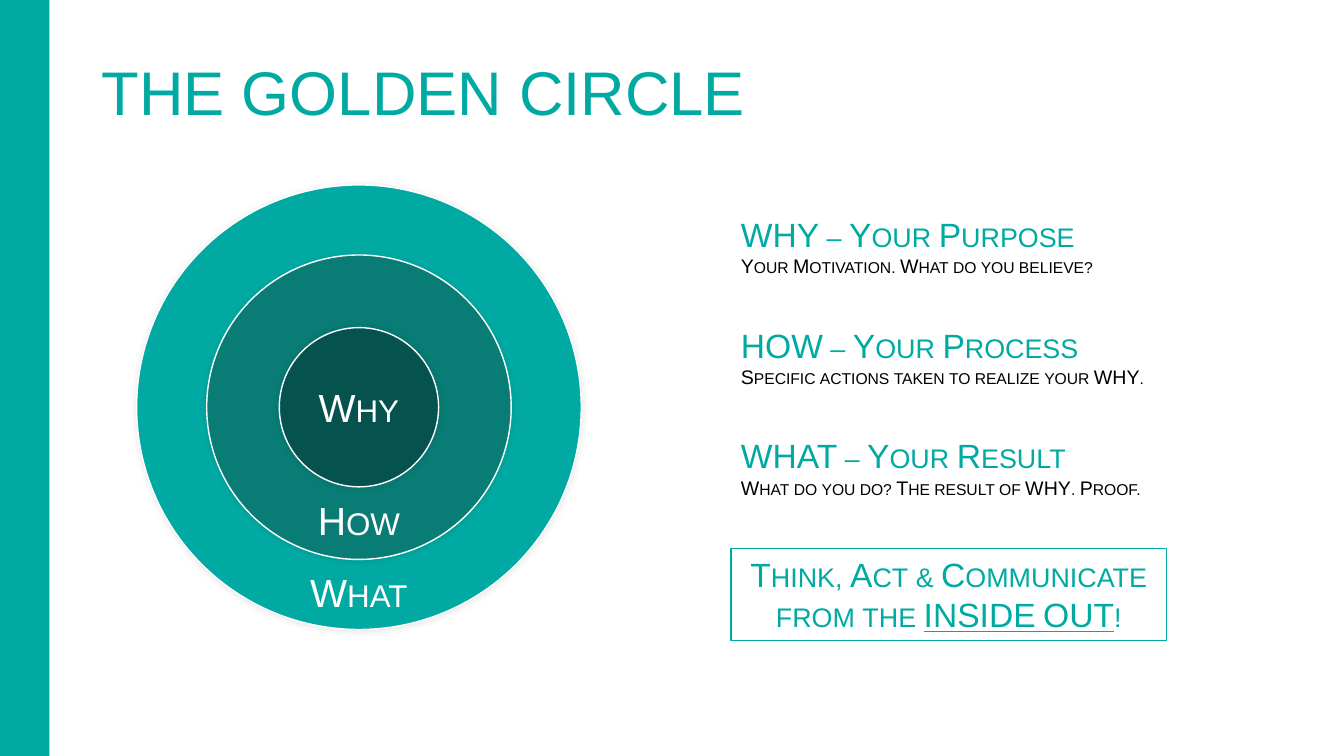
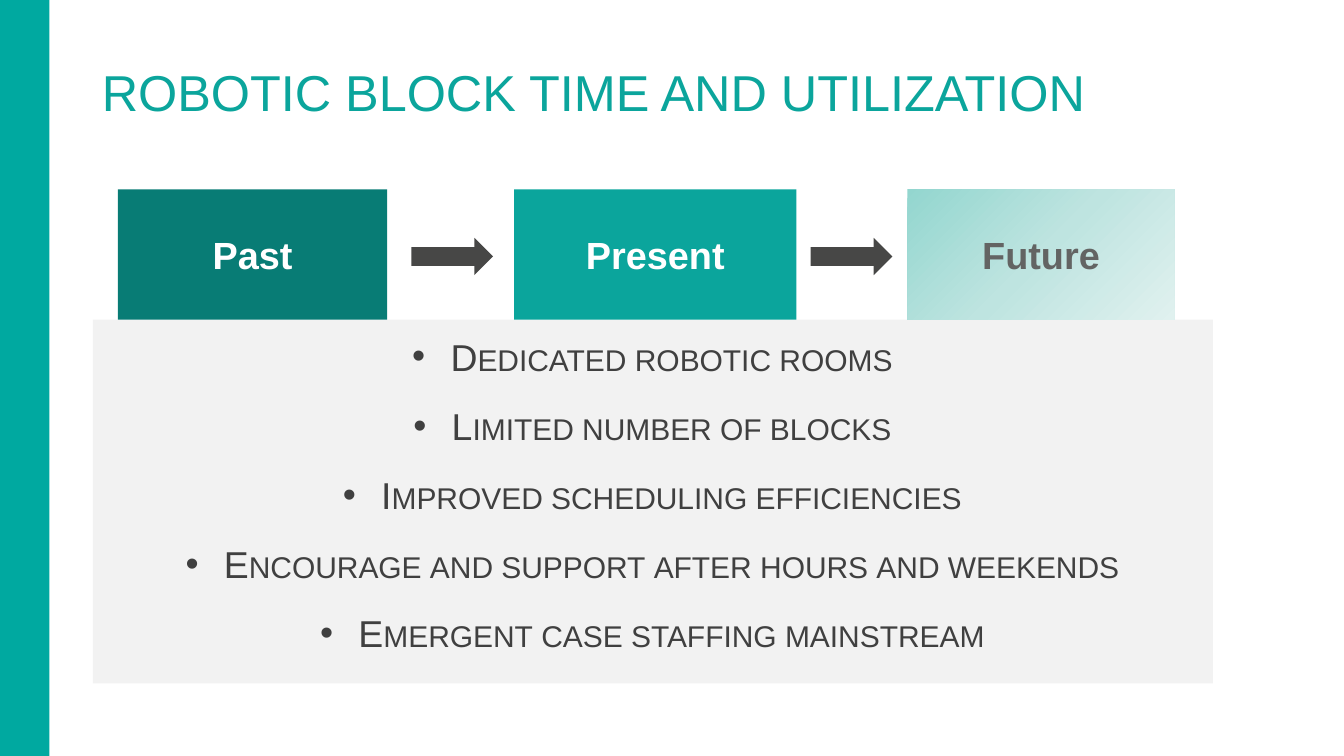
"""Builds two teal slides: the golden circle, and robotic block time."""
from copy import deepcopy

from lxml import etree
from pptx import Presentation
from pptx.dml.color import RGBColor
from pptx.enum.shapes import MSO_SHAPE
from pptx.enum.text import MSO_ANCHOR, MSO_AUTO_SIZE, PP_ALIGN
from pptx.oxml.ns import qn
from pptx.util import Inches, Pt

RECT, OVAL, ARROW = MSO_SHAPE.RECTANGLE, MSO_SHAPE.OVAL, MSO_SHAPE.RIGHT_ARROW
LEFT, CENTER = PP_ALIGN.LEFT, PP_ALIGN.CENTER
TOP, MIDDLE = MSO_ANCHOR.TOP, MSO_ANCHOR.MIDDLE
NO_FIT = MSO_AUTO_SIZE.NONE
TITLE_ONLY, TITLE_AND_BODY = 5, 1

COLORS = {
    "band": "00A9A0", "teal": "00AAA3", "present": "0BA59C", "deep": "087C75",
    "core": "05524E", "white": "FFFFFF", "black": "000000", "panel": "F2F2F2",
    "text": "404040", "arrow": "474746", "future": "636463",
    "fade_start": "93D6CF", "fade_mid": "BEE4E0", "fade_end": "E0F1EF",
}


def rgb(name):
    return RGBColor.from_string(COLORS[name])


class Deck:
    def __init__(self):
        self.prs = Presentation()
        self.prs.slide_width, self.prs.slide_height = Inches(13.33), Inches(7.5)
        self.slide = None

    def start(self, layout, title, size, color):
        self.slide = self.prs.slides.add_slide(self.prs.slide_layouts[layout])
        self.to_back(self.shape(RECT, 0, 0, 0.49, 7.5, "band"))
        heading = self.slide.shapes.title
        self.place(heading, 0.91, 0.34, 12.43, 1.13)
        self.frame(heading, MIDDLE)
        self.add_runs(heading.text_frame.paragraphs[0], [(title, {})], size, color)

    def place(self, shape, *box):
        for side, length in zip(("left", "top", "width", "height"), box):
            setattr(shape, side, Inches(length))

    def frame(self, shape, anchor):
        style = {"word_wrap": True, "auto_size": NO_FIT, "vertical_anchor": anchor}
        for name, value in style.items():
            setattr(shape.text_frame, name, value)

    def add_runs(self, paragraph, runs, size, color, align=LEFT, small=False, bold=False):
        paragraph.alignment = align
        for words, extra in runs:
            run = paragraph.add_run()
            run.text = words
            style = {"name": "Arial", "size": Pt(size), "bold": bold, **extra}
            for name, value in style.items():
                setattr(run.font, name, value)
            run.font.color.rgb = rgb(color)
            if small:
                run._r.get_or_add_rPr().set("cap", "small")

    def shape(self, kind, left, top, width, height, fill=None, line=None, weight=1):
        shape = self.slide.shapes.add_shape(
            kind, Inches(left), Inches(top), Inches(width), Inches(height))
        shape.shadow.inherit = False
        if fill:
            shape.fill.solid()
            shape.fill.fore_color.rgb = rgb(fill)
        else:
            shape.fill.background()
        if line:
            shape.line.color.rgb = rgb(line)
            shape.line.width = Pt(weight)
        else:
            shape.line.fill.background()
        return shape

    def to_back(self, shape):
        self.slide.shapes._spTree.insert(2, shape._element)

    def glow(self, shape):
        effects = shape._element.spPr.find(qn("a:effectLst"))
        shadow = etree.SubElement(effects, qn("a:outerShdw"), blurRad=str(Pt(5)),
                                  dist="0", dir="0", algn="ctr", rotWithShape="0")
        tone = etree.SubElement(shadow, qn("a:srgbClr"), val=COLORS["black"])
        etree.SubElement(tone, qn("a:alpha"), val="10000")

    def fade(self, shape, names):
        shape.fill.gradient()
        shape.fill.gradient_angle = 315
        stops = shape._element.spPr.find(".//" + qn("a:gsLst"))
        stops.insert(1, deepcopy(stops[0]))
        for index, (stop, name) in enumerate(zip(shape.fill.gradient_stops, names)):
            stop.position = index / 2
            stop.color.rgb = rgb(name)

    def ring(self, center_x, center_y, size, fill):
        self.glow(self.shape(OVAL, center_x - size / 2, center_y - size / 2,
                             size, size, fill, "white"))

    def box_text(self, shape, runs, size, color, **style):
        self.frame(shape, MIDDLE)
        self.add_runs(shape.text_frame.paragraphs[0], runs, size, color, CENTER, **style)

    def text(self, left, top, width, height, lines, align=LEFT):
        box = self.slide.shapes.add_textbox(
            Inches(left), Inches(top), Inches(width), Inches(height))
        self.frame(box, TOP)
        for index, (words, size, color) in enumerate(lines):
            self.add_runs(self.paragraph(box, index), [(words, {})], size, color,
                          align, small=True)

    def paragraph(self, shape, index):
        frame = shape.text_frame
        return frame.add_paragraph() if index else frame.paragraphs[0]

    def bullets(self, box, items, size, color):
        body = self.slide.placeholders[1]
        self.place(body, *box)
        self.frame(body, TOP)
        for index, item in enumerate(items):
            paragraph = self.paragraph(body, index)
            props = paragraph._p.get_or_add_pPr()
            props.set("marL", str(Inches(0.38)))
            props.set("indent", str(Inches(-0.38)))
            etree.SubElement(props, qn("a:buFont"), typeface="Arial")
            etree.SubElement(props, qn("a:buChar"), char="•")
            paragraph.space_after = Pt(12)
            if not index:
                paragraph.space_before = Pt(0)
            self.add_runs(paragraph, [(item, {})], size, color, CENTER, small=True)


def golden_circle(deck):
    deck.start(TITLE_ONLY, "THE GOLDEN CIRCLE", 44, "teal")
    center_x, center_y = 3.56, 4.04
    for size, fill in ((4.41, "teal"), (3.02, "deep"), (1.58, "core")):
        deck.ring(center_x, center_y, size, fill)
    for label, top in (("Why", 3.75), ("How", 4.87), ("What", 5.59)):
        deck.text(center_x - 0.61, top, 1.22, 0.57, [(label, 28, "white")], CENTER)

    meanings = (
        ("WHY – Your Purpose", "Your Motivation. What do you believe?"),
        ("HOW – Your Process", "Specific actions taken to realize your WHY."),
        ("WHAT – Your Result", "What do you do? The result of WHY. Proof."),
    )
    for row, (meaning, detail) in enumerate(meanings):
        deck.text(7.25, 2.07 + row * 1.1, 4.5, 0.74,
                  [(meaning, 24, "teal"), (detail, 14, "black")])

    motto = deck.shape(RECT, 7.25, 5.44, 4.32, 0.91, line="teal", weight=0.75)
    deck.box_text(motto, [("Think, Act & Communicate from the ", {}),
                          ("INSIDE OUT", {"underline": True}), ("!", {})],
                  24, "teal", small=True)


def block_time(deck):
    deck.start(TITLE_AND_BODY, "ROBOTIC BLOCK TIME AND UTILIZATION", 36, "present")
    deck.to_back(deck.shape(RECT, 0.92, 3.17, 11.11, 3.61, "panel"))
    deck.bullets((0.91, 3.26, 11.12, 3.52), (
        "Dedicated robotic rooms",
        "Limited number of blocks",
        "Improved scheduling efficiencies",
        "Encourage and support after hours and weekends",
        "Emergent case staffing mainstream",
    ), 26.7, "text")

    stages = (
        ("Past", 1.17, 2.67, "deep", "white"),
        ("Present", 5.1, 2.8, "present", "white"),
        ("Future", 9, 2.65, None, "future"),
    )
    for stage, left, width, fill, color in stages:
        block = deck.shape(RECT, left, 1.88, width, 1.29, fill)
        if not fill:
            deck.fade(block, ("fade_start", "fade_mid", "fade_end"))
        deck.box_text(block, [(stage, {})], 27, color, bold=True)
    for left in (4.08, 8.04):
        deck.shape(ARROW, left, 2.36, 0.81, 0.37, "arrow")


def main():
    deck = Deck()
    golden_circle(deck)
    block_time(deck)
    deck.prs.save("out.pptx")


if __name__ == "__main__":
    main()
